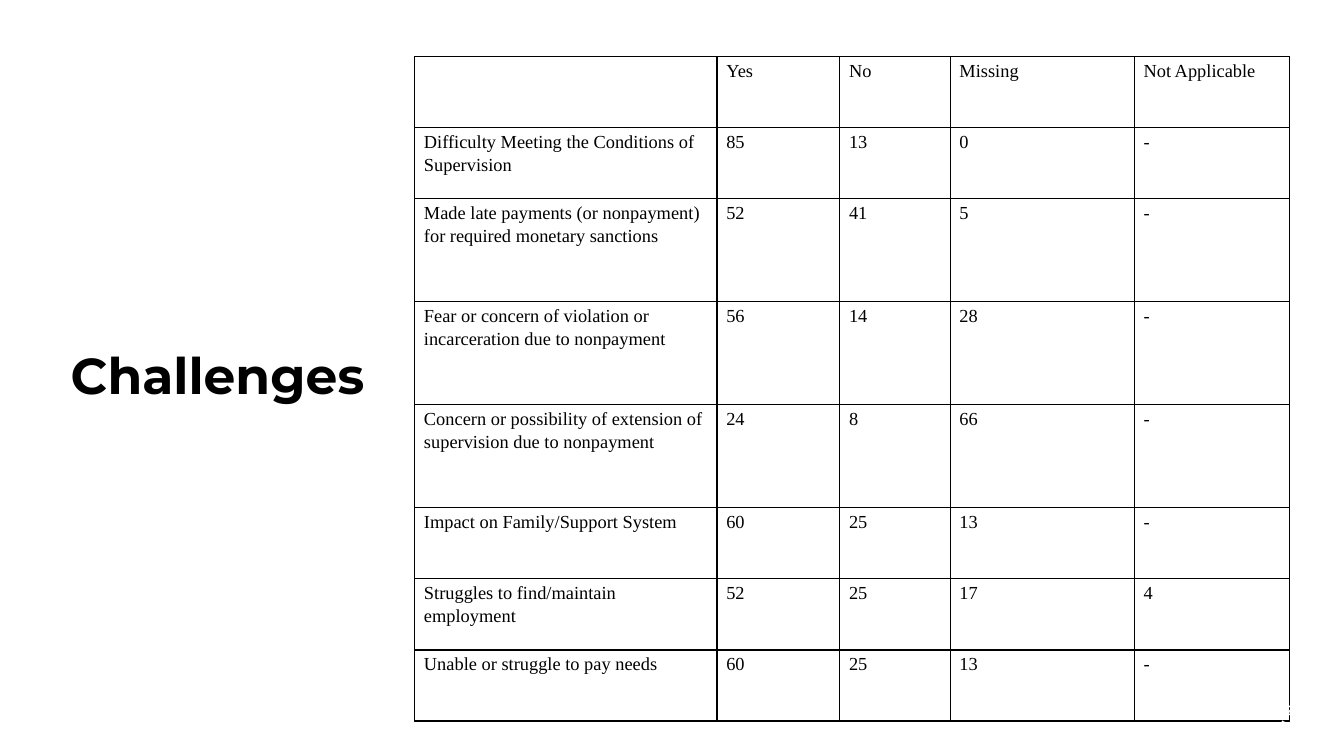
from lxml.etree import SubElement
from pptx import Presentation
from pptx.dml.color import RGBColor
from pptx.enum.text import MSO_ANCHOR as Anchor, PP_ALIGN as Align
from pptx.oxml.ns import qn
from pptx.util import Cm, Pt

BLACK, WHITE = "000000", "FFFFFF"
COLUMN_WIDTHS = [8.13, 3.3, 2.97, 4.95, 4.17]
SHORT_ROW, TALL_ROW = 1.91, 2.77
ROWS = [
    (SHORT_ROW, ["", "Yes", "No", "Missing", "Not Applicable"]),
    (SHORT_ROW, ["Difficulty Meeting the Conditions of Supervision", "85", "13", "0", "-"]),
    (TALL_ROW, ["Made late payments (or nonpayment) for required monetary sanctions",
                "52", "41", "5", "-"]),
    (TALL_ROW, ["Fear or concern of violation or incarceration due to nonpayment",
                "56", "14", "28", "-"]),
    (TALL_ROW, ["Concern or possibility of extension of supervision due to nonpayment",
                "24", "8", "66", "-"]),
    (SHORT_ROW, ["Impact on Family/Support System", "60", "25", "13", "-"]),
    (SHORT_ROW, ["Struggles to find/maintain employment", "52", "25", "17", "4"]),
    (SHORT_ROW, ["Unable or struggle to pay needs", "60", "25", "13", "-"]),
]


def color(value):
    return RGBColor.from_string(value)


def add_run(paragraph, words, font, size, fill, bold=False):
    run = paragraph.add_run()
    run.text = words
    run.font.name = font
    run.font.size = Pt(size)
    run.font.bold = bold
    run.font.color.rgb = color(fill)


def add_title(slide, words):
    title = slide.shapes.title
    title.left, title.top, title.width, title.height = Cm(1.47), Cm(1.52), Cm(9.14), Cm(17.09)
    frame = title.text_frame
    frame.word_wrap = True
    frame.vertical_anchor = Anchor.MIDDLE
    heading = frame.paragraphs[0]
    heading.alignment = Align.CENTER
    add_run(heading, words, "Montserrat", 38.4, BLACK, bold=True)


def add_borders(cell):
    properties = cell._tc.get_or_add_tcPr()
    for position, side in enumerate(("lnL", "lnR", "lnT", "lnB")):
        line = SubElement(properties, qn(f"a:{side}"), w=str(Pt(1)))
        fill = SubElement(line, qn("a:solidFill"))
        SubElement(fill, qn("a:srgbClr"), val=BLACK)
        properties.insert(position, line)


def fill_cell(cell, words):
    cell.fill.solid()
    cell.fill.fore_color.rgb = color(WHITE)
    cell.margin_left = cell.margin_right = Cm(0.25)
    cell.margin_top, cell.margin_bottom = Cm(0.03), Cm(0)
    add_borders(cell)
    if words:
        entry = cell.text_frame.paragraphs[0]
        entry.line_spacing = 1.15
        add_run(entry, words, "Times New Roman", 14, BLACK)


def add_challenges_table(slide):
    heights = [height for height, _ in ROWS]
    challenges = slide.shapes.add_table(
        len(ROWS), len(COLUMN_WIDTHS), Cm(11.15), Cm(1.52),
        Cm(sum(COLUMN_WIDTHS)), Cm(sum(heights))).table
    for column, width in zip(challenges.columns, COLUMN_WIDTHS):
        column.width = Cm(width)
    for row, (height, entries) in zip(challenges.rows, ROWS):
        row.height = Cm(height)
        for cell, words in zip(row.cells, entries):
            fill_cell(cell, words)


def add_page_number(slide, number):
    frame = slide.shapes.add_textbox(Cm(29.59), Cm(18.67), Cm(5.92), Cm(1.02)).text_frame
    frame.word_wrap = True
    frame.vertical_anchor = Anchor.MIDDLE
    page = frame.paragraphs[0]
    page.alignment = Align.RIGHT
    add_run(page, number, "Montserrat", 20, WHITE)


def main():
    deck = Presentation()
    deck.slide_width, deck.slide_height = Cm(36.14), Cm(20.32)
    slide = deck.slides.add_slide(deck.slide_layouts[5])
    slide.background.fill.solid()
    slide.background.fill.fore_color.rgb = color(WHITE)
    add_title(slide, "Challenges ")
    add_challenges_table(slide)
    add_page_number(slide, "37")
    deck.save("out.pptx")


if __name__ == "__main__":
    main()
